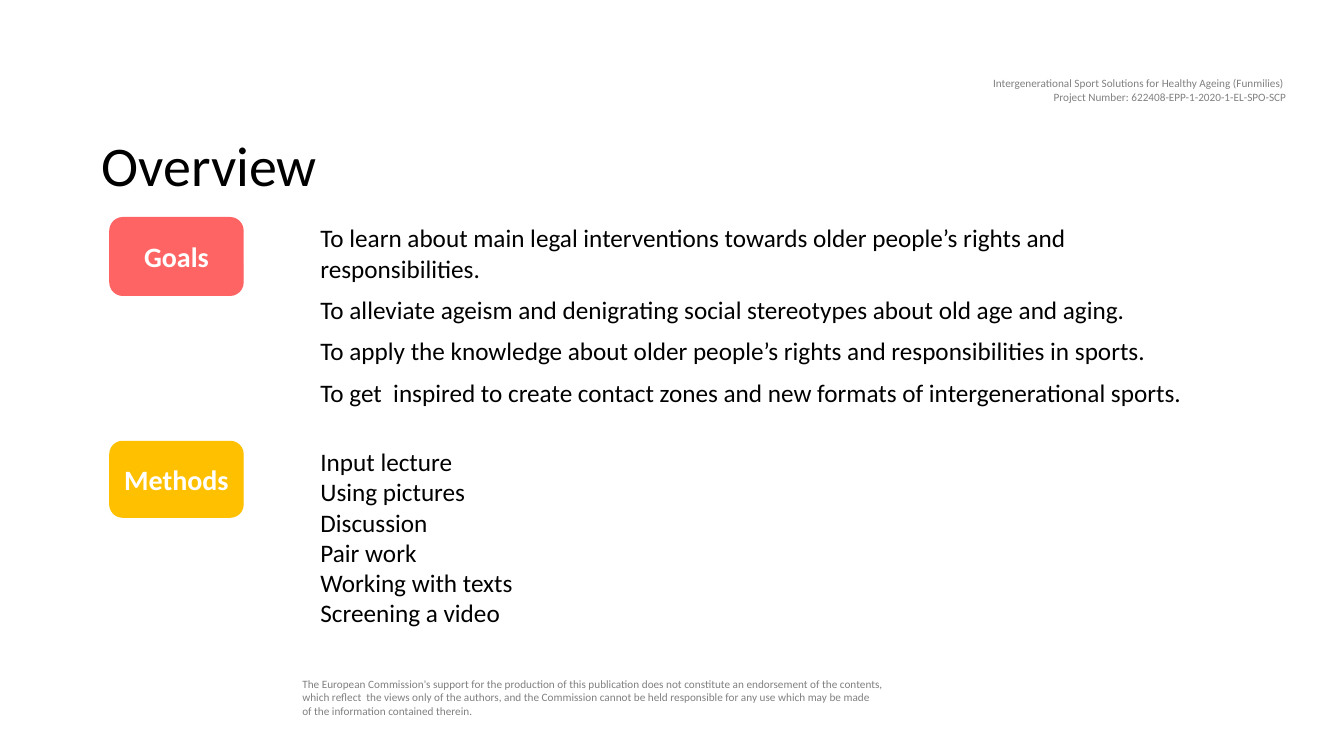
import pptx
import pptx.dml.color
import pptx.enum.shapes
import pptx.enum.text
import pptx.util

Inches = pptx.util.Inches
Pt = pptx.util.Pt
ALIGN = pptx.enum.text.PP_ALIGN
ANCHOR = pptx.enum.text.MSO_ANCHOR

COLOURS = {"ink": "000000", "grey": "808080", "white": "FFFFFF",
           "goals": "FF6464", "methods": "FFC000"}
FONTS = {
    "title": {"name": "Calibri", "size": Pt(40)},
    "badge": {"name": "Calibri", "size": Pt(20), "bold": True},
    "body": {"name": "Calibri", "size": Pt(18)},
    "small": {"name": "Calibri", "size": Pt(8)},
}

PROJECT = ("Intergenerational Sport Solutions for Healthy Ageing (Funmilies) \n"
           "Project Number: 622408-EPP-1-2020-1-EL-SPO-SCP")
DISCLAIMER = (
    "The European Commission's support for the production of this publication "
    "does not constitute an endorsement of the contents, \n"
    "which reflect  the views only of the authors, and the Commission cannot be "
    "held responsible for any use which may be made \n"
    "of the information contained therein.")
GOALS = [
    "To learn about main legal interventions towards older people’s rights and responsibilities.",
    "To alleviate ageism and denigrating social stereotypes about old age and aging.",
    "To apply the knowledge about older people’s rights and responsibilities in sports.",
    "To get  inspired to create contact zones and new formats of intergenerational sports.",
]
METHODS = ["Input lecture", "Using pictures", "Discussion", "Pair work",
           "Working with texts", "Screening a video"]


def rgb(colour):
    """Return the named colour."""
    return pptx.dml.color.RGBColor.from_string(COLOURS[colour])


def write(frame, lines, font, colour, anchor=ANCHOR.TOP, **layout):
    """Fill a text frame with one formatted paragraph per line."""
    frame.word_wrap = True
    frame.vertical_anchor = anchor
    for index, line in enumerate(lines):
        para = frame.paragraphs[0] if index == 0 else frame.add_paragraph()
        para.text = line
        for name, value in layout.items():
            setattr(para, name, value)
        for span in para.runs:
            for name, value in FONTS[font].items():
                setattr(span.font, name, value)
            span.font.color.rgb = rgb(colour)


def add_text(page, box, lines, font, colour="ink", **layout):
    """Add a wrapped text box."""
    shape = page.shapes.add_textbox(*map(Inches, box))
    write(shape.text_frame, lines, font, colour, **layout)


def add_section(page, box, label, colour, badge_height, lines, **layout):
    """Add a rounded badge with its text beside it, both starting at the box top."""
    left, top, width, height = box
    badge = page.shapes.add_shape(
        pptx.enum.shapes.MSO_SHAPE.ROUNDED_RECTANGLE,
        *map(Inches, (left, top, 1.32, badge_height)))
    badge.shadow.inherit = False
    badge.fill.solid()
    badge.fill.fore_color.rgb = rgb(colour)
    badge.line.color.rgb = rgb(colour)
    badge.line.width = Pt(1)
    write(badge.text_frame, [label], "badge", "white",
          anchor=ANCHOR.MIDDLE, alignment=ALIGN.CENTER)
    indent = 1.99
    add_text(page, (left + indent, top, width - indent, height), lines, "body", **layout)


def add_overview(page):
    """Place every region of the overview slide."""
    add_text(page, (2.9, 6.67, 6.81, 0.5), [DISCLAIMER], "small", "grey")
    add_text(page, (6.19, 0.71, 6.67, 0.37), [PROJECT], "small", "grey",
             alignment=ALIGN.RIGHT)
    add_text(page, (0.91, 1.29, 11.5, 0.77), ["Overview"], "title",
             anchor=ANCHOR.MIDDLE, line_spacing=0.9)
    add_section(page, (1.09, 2.16, 11.02, 1.95), "Goals", "goals", 0.77, GOALS,
                space_after=Pt(8))
    add_section(page, (1.09, 4.38, 10.23, 1.9), "Methods", "methods", 0.75, METHODS)


def main():
    """Build and save the deck."""
    deck = pptx.Presentation()
    deck.slide_width = Inches(13.33)
    deck.slide_height = Inches(7.5)
    add_overview(deck.slides.add_slide(deck.slide_layouts[6]))
    deck.save("out.pptx")


if __name__ == "__main__":
    main()
